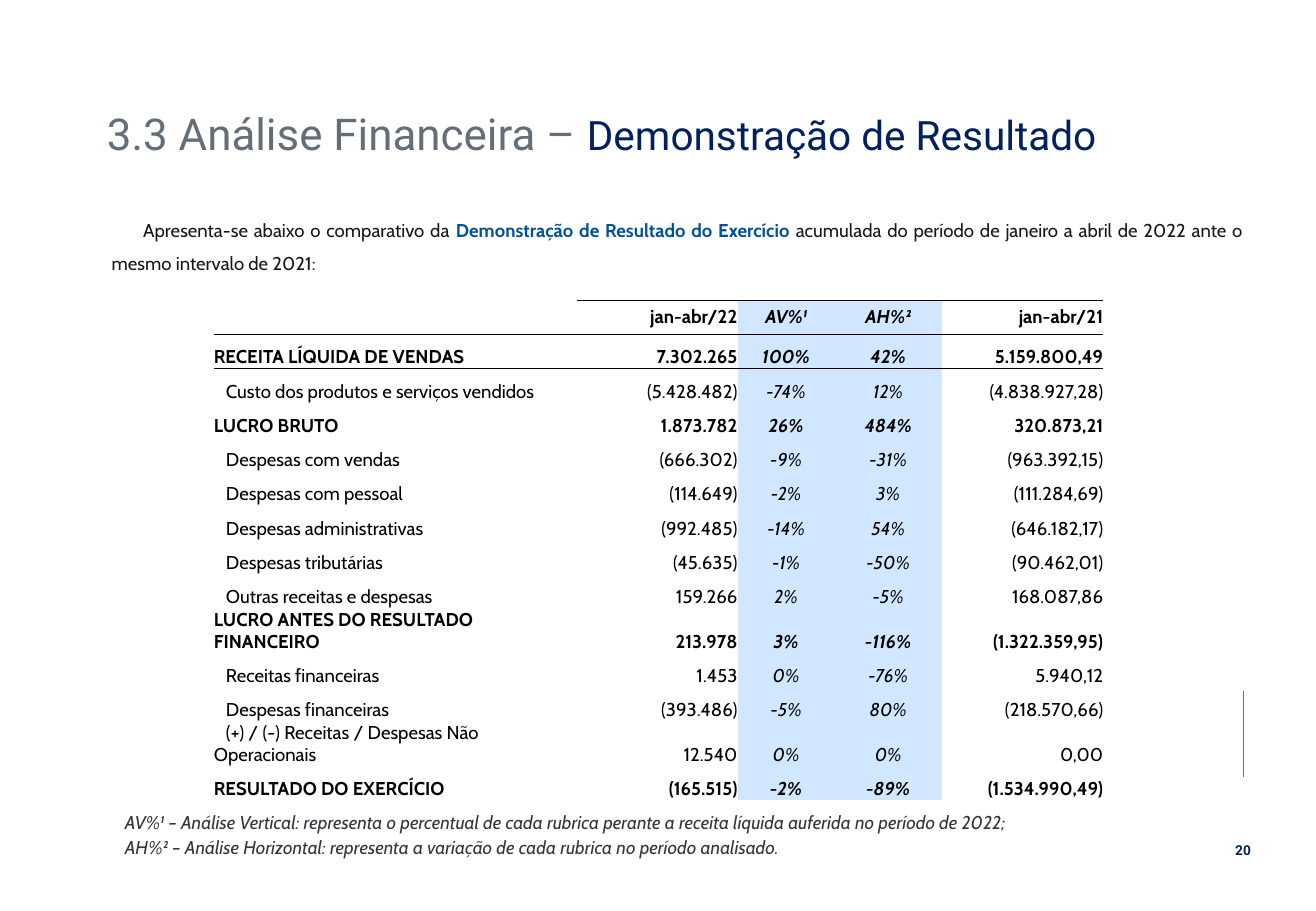
from lxml import etree
from pptx import Presentation
from pptx import util as u
from pptx.dml.color import RGBColor
from pptx.enum import shapes, text
from pptx.oxml import ns

HEX = {"gray": "656D78", "navy": "002060", "blue": "04509C", "ink": "181717",
       "note": "33363C", "black": "000000", "pale": "D1E6FF"}
WIDE, HIGH = 10.83, 7.5

TITLE = [("3.3 Análise Financeira – ", 26, "gray"),
         ("Demonstração de Resultado", 24, "navy")]
INTRO = [("Apresenta-se abaixo o comparativo da ", "ink", False),
         ("Demonstração de Resultado do Exercício ", "blue", True),
         ("acumulada do período de janeiro a abril de 2022 ante o mesmo "
          "intervalo de 2021:", "ink", False)]
NOTES = ["AV%¹ – Análise Vertical: representa o percentual de cada rubrica "
         "perante a receita líquida auferida no período de 2022;",
         "AH%² – Análise Horizontal: representa a variação de cada rubrica "
         "no período analisado."]
PAGE = "20"

ROWS = [
    ("", "jan-abr/22", "AV%¹", "AH%²", "jan-abr/21"),
    ("RECEITA LÍQUIDA DE VENDAS", "7.302.265", "100%", "42%", "5.159.800,49"),
    ("Custo dos produtos e serviços vendidos", "(5.428.482)", "-74%", "12%", "(4.838.927,28)"),
    ("LUCRO BRUTO", "1.873.782", "26%", "484%", "320.873,21"),
    ("Despesas com vendas", "(666.302)", "-9%", "-31%", "(963.392,15)"),
    ("Despesas com pessoal", "(114.649)", "-2%", "3%", "(111.284,69)"),
    ("Despesas administrativas", "(992.485)", "-14%", "54%", "(646.182,17)"),
    ("Despesas tributárias", "(45.635)", "-1%", "-50%", "(90.462,01)"),
    ("Outras receitas e despesas", "159.266", "2%", "-5%", "168.087,86"),
    ("LUCRO ANTES DO RESULTADO FINANCEIRO", "213.978", "3%", "-116%", "(1.322.359,95)"),
    ("Receitas financeiras", "1.453", "0%", "-76%", "5.940,12"),
    ("Despesas financeiras", "(393.486)", "-5%", "80%", "(218.570,66)"),
    ("(+) / (-) Receitas / Despesas Não Operacionais", "12.540", "0%", "0%", "0,00"),
    ("RESULTADO DO EXERCÍCIO", "(165.515)", "-2%", "-89%", "(1.534.990,49)"),
]
COLS = [2.99, 1.32, 0.8, 0.88, 1.33]
RATES = (2, 3)
LEFT, MID, RIGHT = text.PP_ALIGN.LEFT, text.PP_ALIGN.CENTER, text.PP_ALIGN.RIGHT
SIDES = [LEFT, RIGHT, MID, MID, RIGHT]
PLAIN = "{2D5ABB26-0587-4C30-8999-92F81FD0307C}"


def tint(name):
    return RGBColor.from_string(HEX[name])


def style(font, size, hue, face="Cabin", bold=False, slant=False):
    font.name, font.size = face, u.Pt(size)
    font.bold, font.italic = bold, slant
    font.color.rgb = tint(hue)


def indent(para, inches):
    para._p.get_or_add_pPr().set("indent", str(u.Inches(inches)))


def box(slide, *area):
    frame = slide.shapes.add_textbox(*map(u.Inches, area)).text_frame
    frame.word_wrap = True
    return frame


def border(cell, tag):
    line = etree.Element(ns.qn("a:" + tag), w=str(u.Pt(0.5)))
    fill = etree.SubElement(line, ns.qn("a:solidFill"))
    etree.SubElement(fill, ns.qn("a:srgbClr"), val=HEX["black"])
    cell._tc.get_or_add_tcPr().insert(0, line)


def write(cell, word, row, col):
    head = row == 0
    total = ROWS[row][0].isupper()
    cell.margin_left = cell.margin_right = cell.margin_top = cell.margin_bottom = 0
    cell.vertical_anchor = text.MSO_ANCHOR.MIDDLE if head else text.MSO_ANCHOR.BOTTOM
    para = cell.text_frame.paragraphs[0]
    para.alignment = SIDES[col]
    if word:
        para.text = word
    else:
        para.line_spacing = u.Pt(11)
    if col == 0 and not (head or total):
        indent(para, 0.1)
    style(para.font, 11, "black", bold=head or total, slant=col in RATES)
    if col in RATES:
        cell.fill.solid()
        cell.fill.fore_color.rgb = tint("pale")
    else:
        cell.fill.background()
    if head:
        border(cell, "lnB")
    if row == 1 or head and col:
        border(cell, "lnT")


def main():
    deck = Presentation()
    deck.slide_width, deck.slide_height = u.Inches(WIDE), u.Inches(HIGH)
    slide = deck.slides.add_slide(deck.slide_layouts[5])

    title = slide.shapes.title
    title.left, title.top, title.width, title.height = map(
        u.Inches, (0.78, 0.86, 9.37, 0.53))
    title.text_frame.vertical_anchor = text.MSO_ANCHOR.MIDDLE
    para = title.text_frame.paragraphs[0]
    para.alignment, para.line_spacing = LEFT, 0.9
    for word, size, hue in TITLE:
        run = para.add_run()
        run.text = word
        style(run.font, size, hue, "Roboto")

    para = box(slide, 0.82, 1.66, 9.51, 0.63).paragraphs[0]
    para.alignment, para.line_spacing = text.PP_ALIGN.JUSTIFY, 1.5
    indent(para, 0.26)
    for word, hue, bold in INTRO:
        run = para.add_run()
        run.text = word
        style(run.font, 11, hue, bold=bold)

    table = slide.shapes.add_table(
        len(ROWS), len(COLS), *map(u.Inches, (1.76, 2.47, sum(COLS), 3.95))).table
    table.first_row = table.horz_banding = False
    table._tbl.tblPr.find(ns.qn("a:tableStyleId")).text = PLAIN
    for col, width in enumerate(COLS):
        table.columns[col].width = u.Inches(width)
    for row, words in enumerate(ROWS):
        for col, word in enumerate(words):
            write(table.cell(row, col), word, row, col)

    frame = box(slide, 0.62, 6.6, 9.76, 0.51)
    for spot, word in enumerate(NOTES):
        para = frame.add_paragraph() if spot else frame.paragraphs[0]
        para.text, para.line_spacing = word, 1.13
        indent(para, 0.31)
        style(para.font, 11, "note", slant=True)

    rule = slide.shapes.add_connector(
        shapes.MSO_CONNECTOR.STRAIGHT, *map(u.Inches, (10.23, 5.69, 10.23, 6.4)))
    rule.line.color.rgb, rule.line.width = tint("gray"), u.Pt(0.5)
    etree.SubElement(rule._element.spPr, ns.qn("a:effectLst"))

    frame = box(slide, 10.06, 6.88, 0.34, 0.24)
    frame.word_wrap = False
    para = frame.paragraphs[0]
    para.text, para.alignment = PAGE, MID
    style(para.font, 8.1, "navy", "Roboto", bold=True)

    deck.save("out.pptx")


if __name__ == "__main__":
    main()
